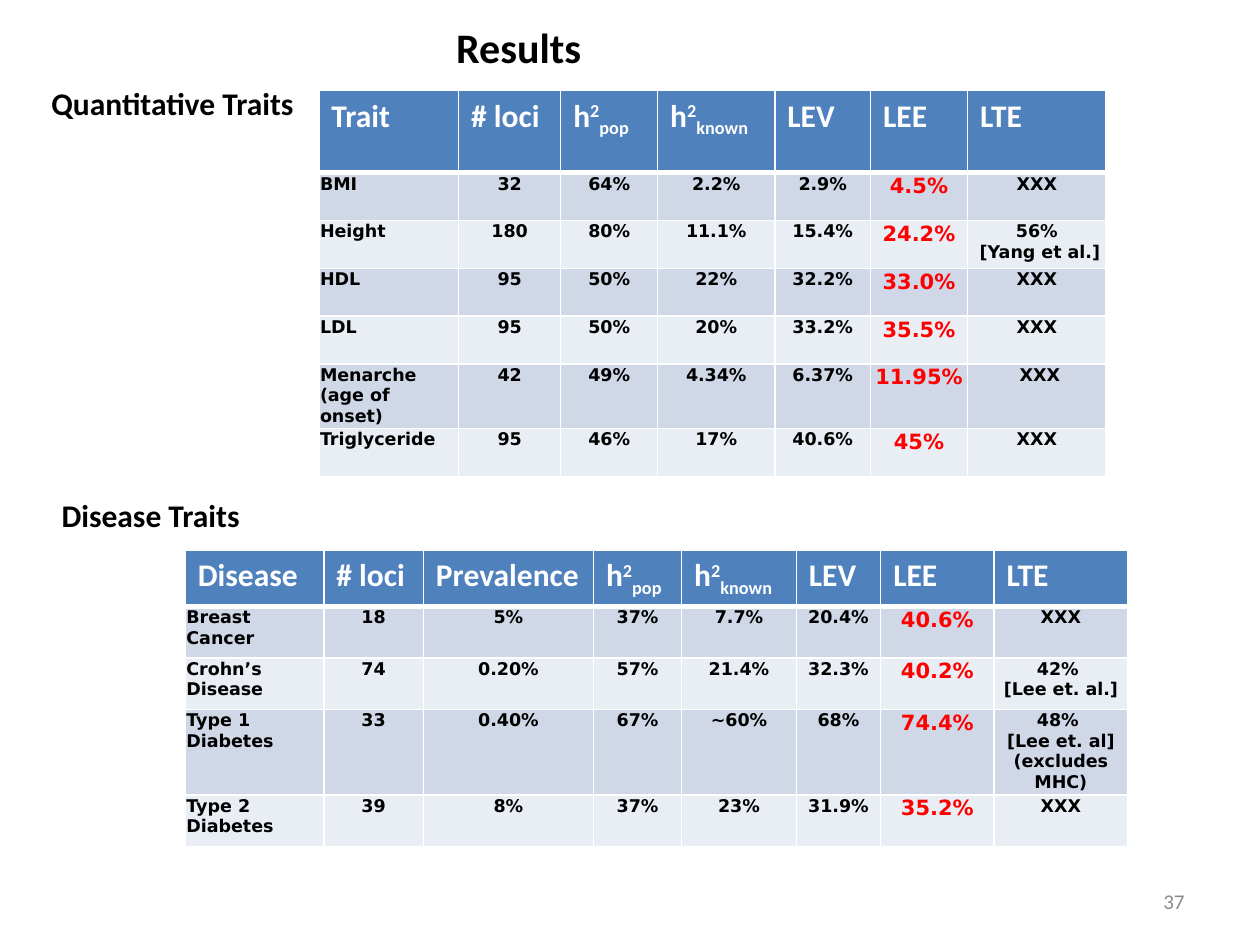
"""Build the heritability results slide with its two trait tables."""
from dataclasses import dataclass

import pptx
import pptx.dml.color
import pptx.enum.text
import pptx.oxml
import pptx.oxml.ns
import pptx.util
from pptx.util import Inches

ALIGN = pptx.enum.text.PP_ALIGN
ANCHOR = pptx.enum.text.MSO_ANCHOR


@dataclass(frozen=True)
class Theme:
    """Colours, fonts and type sizes of the slide."""
    heading_font: str = "Calibri"
    cell_font: str = "DejaVu Sans"
    text: str = "000000"
    accent: str = "FF0000"
    muted: str = "8C8C8C"
    border: str = "FFFFFF"
    header: str = "4F81BD"
    bands: tuple = ("D0D8E8", "E9EDF4")
    title_size: int = 24
    heading_size: int = 18
    accent_size: int = 12
    cell_size: int = 10
    number_size: int = 12


THEME = Theme()
H_POP = (("h", 0), ("2", 30), ("pop", -25))
H_KNOWN = (("h", 0), ("2", 30), ("known", -25))

TRAITS = [
    ["Trait", "# loci", H_POP, H_KNOWN, "LEV", "LEE", "LTE"],
    ["BMI", "32", "64%", "2.2%", "2.9%", "4.5%", "XXX"],
    ["Height", "180", "80%", "11.1%", "15.4%", "24.2%", "56%\n [Yang et al.]"],
    ["HDL", "95", "50%", "22%", "32.2%", "33.0%", "XXX"],
    ["LDL", "95", "50%", "20%", "33.2%", "35.5%", "XXX"],
    ["Menarche (age of onset)", "42", "49%", "4.34%", "6.37%", "11.95%", " XXX"],
    ["Triglyceride", "95", "46%", "17%", "40.6%", "45%", "XXX"],
]
DISEASES = [
    ["Disease", "# loci", "Prevalence", H_POP, H_KNOWN, "LEV", "LEE", "LTE"],
    ["Breast Cancer", "18", "5%", "37%", "7.7%", "20.4%", "40.6%", "XXX"],
    ["Crohn’s Disease", "74", "0.20%", "57%", "21.4%", "32.3%", "40.2%",
     "42% \n[Lee et. al.]"],
    ["Type 1 Diabetes", "33", "0.40%", "67%", "~60%", "68%", "74.4%",
     "48% \n[Lee et. al]\v(excludes MHC)"],
    ["Type 2 Diabetes", "39", "8%", "37%", "23%", "31.9%", "35.2%", "XXX"],
]


def style(p, name, size, color, bold=True, align=ALIGN.LEFT):
    """Set the font and alignment of a paragraph."""
    p.font.name, p.font.size, p.font.bold = name, pptx.util.Pt(size), bold
    p.font.color.rgb = pptx.dml.color.RGBColor.from_string(color)
    p.alignment = align


def place(sp, left, top, width, height):
    """Move and size a shape, in inches."""
    sp.left, sp.top = Inches(left), Inches(top)
    sp.width, sp.height = Inches(width), Inches(height)


def set_title(s, text, box):
    """Fill and format the title placeholder."""
    sp = s.shapes.title
    place(sp, *box)
    tf = sp.text_frame
    tf.text = text
    tf.word_wrap = False
    tf.vertical_anchor = ANCHOR.TOP
    style(tf.paragraphs[0], THEME.heading_font, THEME.title_size, THEME.text)


def add_label(s, text, box, size, color, **options):
    """Add a one-line text box."""
    tf = s.shapes.add_textbox(*map(Inches, box)).text_frame
    tf.text = text
    tf.word_wrap = False
    style(tf.paragraphs[0], THEME.heading_font, size, color, **options)
    return tf


def set_borders(cell, top=1, bottom=1):
    """Draw the four cell borders, with widths in points."""
    tc_pr = cell._tc.get_or_add_tcPr()
    widths = {"lnL": 1, "lnR": 1, "lnT": top, "lnB": bottom}
    for i, (tag, width) in enumerate(widths.items()):
        tc_pr.insert(i, pptx.oxml.parse_xml(
            f'<a:{tag} {pptx.oxml.ns.nsdecls("a")} w="{pptx.util.Pt(width)}">'
            f'<a:solidFill><a:srgbClr val="{THEME.border}"/></a:solidFill></a:{tag}>'))


def set_fill(cell, color):
    """Fill a cell with a solid colour."""
    cell.fill.solid()
    cell.fill.fore_color.rgb = pptx.dml.color.RGBColor.from_string(color)


def fill_header(cell, content):
    """Write a header cell, with raised and lowered parts where given."""
    p = cell.text_frame.paragraphs[0]
    parts = ((content, 0),) if isinstance(content, str) else content
    for text, baseline in parts:
        r = p.add_run()
        r.text = text
        if baseline:
            r._r.get_or_add_rPr().set("baseline", str(baseline * 1000))
    style(p, THEME.heading_font, THEME.heading_size, THEME.border)
    set_fill(cell, THEME.header)
    set_borders(cell, bottom=3)


def fill_body(cell, text, row, is_name, is_accent):
    """Write a body cell in its band colour."""
    cell.margin_left = cell.margin_right = cell.margin_top = Inches(0.01)
    cell.margin_bottom = 0
    cell.text_frame.text = text
    size, color = ((THEME.accent_size, THEME.accent) if is_accent
                   else (THEME.cell_size, THEME.text))
    for p in cell.text_frame.paragraphs:
        style(p, THEME.cell_font, size, color,
              align=ALIGN.LEFT if is_name else ALIGN.CENTER)
    set_fill(cell, THEME.bands[(row - 1) % 2])
    set_borders(cell, top=3 if row == 1 else 1)


def add_results(s, data, left, top, widths, heights):
    """Add a results table with the LEE column accented."""
    frame = s.shapes.add_table(len(data), len(widths), Inches(left), Inches(top),
                               Inches(sum(widths)), Inches(sum(heights)))
    table = frame.table
    for column, width in zip(table.columns, widths):
        column.width = Inches(width)
    accent = data[0].index("LEE")
    for i, (values, height) in enumerate(zip(data, heights)):
        table.rows[i].height = Inches(height)
        for j, value in enumerate(values):
            cell = table.cell(i, j)
            if i == 0:
                fill_header(cell, value)
            else:
                fill_body(cell, value, i, j == 0, j == accent)


def main():
    """Build and save the slide."""
    prs = pptx.Presentation()
    prs.slide_width, prs.slide_height = Inches(10), Inches(7.5)
    s = prs.slides.add_slide(prs.slide_layouts[5])
    set_title(s, "Results", (3.52, 0.12, 1.21, 0.5))
    number = add_label(s, "37", (7.17, 6.95, 2.33, 0.4), THEME.number_size,
                       THEME.muted, bold=False, align=ALIGN.RIGHT)
    number.word_wrap = True
    number.vertical_anchor = ANCHOR.MIDDLE
    add_results(s, TRAITS, 2.53, 0.72, [1.11, 0.81, 0.77, 0.93, 0.76, 0.77, 1.1],
                [0.65] + [0.38] * 4 + [0.51, 0.38])
    add_label(s, "Quantitative Traits", (0.31, 0.62, 2.14, 0.4),
              THEME.heading_size, THEME.text)
    add_results(s, DISEASES, 1.47, 4.37,
                [1.1, 0.79, 1.35, 0.7, 0.91, 0.67, 0.9, 1.06],
                [0.44, 0.41, 0.41, 0.67, 0.41])
    add_label(s, "Disease Traits", (0.39, 3.89, 1.63, 0.4),
              THEME.heading_size, THEME.text)
    prs.save("out.pptx")


if __name__ == "__main__":
    main()
